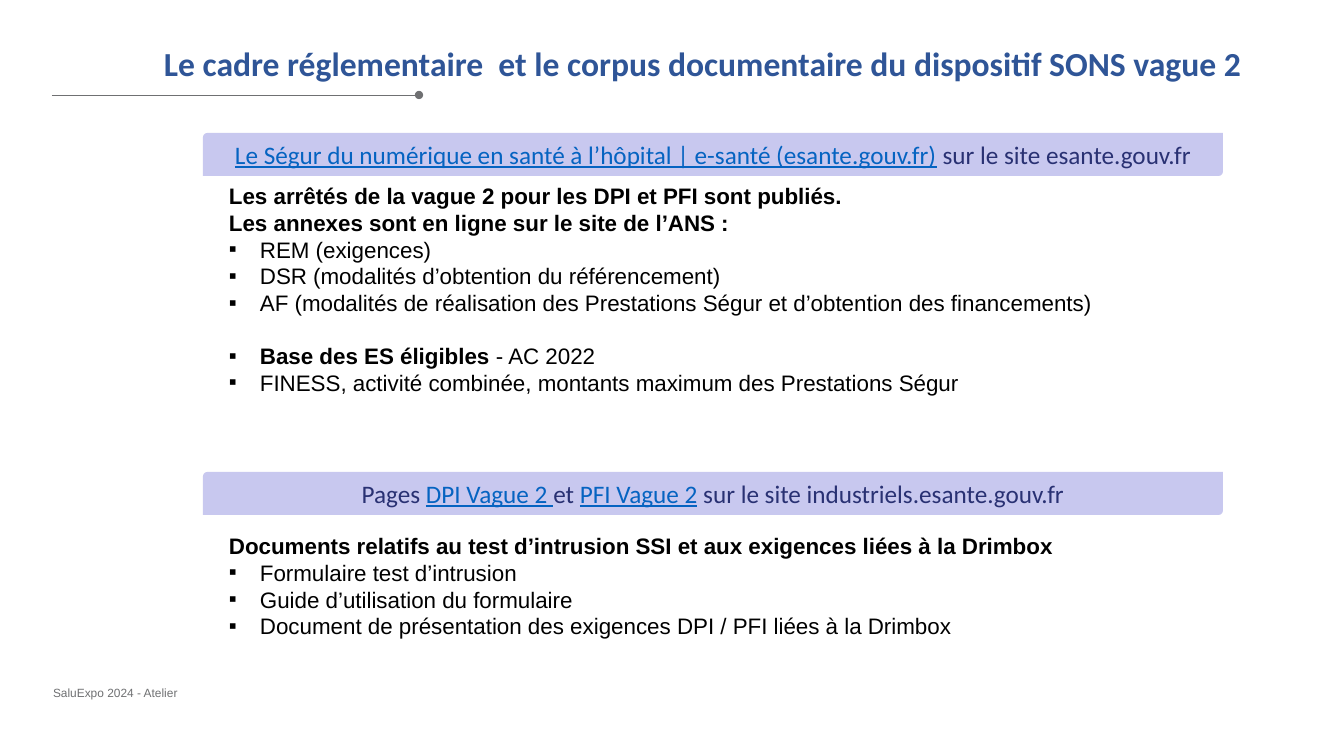
from lxml.etree import SubElement
from pptx import Presentation
from pptx.dml.color import RGBColor
from pptx.enum.shapes import MSO_CONNECTOR as Connector, MSO_SHAPE as Shape
from pptx.enum.text import MSO_ANCHOR as Anchor, PP_ALIGN as Align
from pptx.oxml.ns import qn
from pptx.util import Pt

PX = 12192000 / 1344
NAVY, LINK, TITLE_BLUE = "293173", "0563C1", "2F5597"
LILAC, GREY, BLACK = "C8C8EF", "6F7072", "000000"


def px(length):
    return round(length * PX)


def color(value):
    return RGBColor.from_string(value)


def style(span, font, size, ink, bold=False, underline=False):
    span.font.name = font
    span.font.size = Pt(size)
    span.font.color.rgb = color(ink)
    span.font.bold = bold
    span.font.underline = underline


def add_box(page, left, top, width, height, inset_x=10, inset_y=5):
    frame = page.shapes.add_textbox(px(left), px(top), px(width), px(height)).text_frame
    frame.word_wrap = True
    frame.margin_left = frame.margin_right = px(inset_x)
    frame.margin_top = frame.margin_bottom = px(inset_y)
    return frame


def add_bullet(para):
    props = para._p.get_or_add_pPr()
    props.set("marL", str(px(31)))
    props.set("indent", str(px(-31)))
    ink = SubElement(SubElement(props, qn("a:buClr")), qn("a:srgbClr"))
    ink.set("val", BLACK)
    SubElement(props, qn("a:buFont")).set("typeface", "Arial")
    SubElement(props, qn("a:buChar")).set("char", "▪")


def add_header(page, left, top, width):
    para = add_box(page, left + 102, top, width - 102, 50).paragraphs[0]
    para.text = "Le cadre réglementaire  et le corpus documentaire du dispositif SONS vague 2"
    style(para.runs[0], "Calibri", 24, TITLE_BLUE, bold=True)

    rule = page.shapes.add_connector(
        Connector.STRAIGHT, px(left), px(top + 57), px(left + 367), px(top + 57))
    rule.line.color.rgb = color(GREY)
    rule.line.width = Pt(0.5)
    SubElement(rule.line._get_or_add_ln(), qn("a:tailEnd")).set("type", "oval")
    SubElement(rule._element.spPr, qn("a:effectLst"))


def add_banner(page, left, top, width, parts):
    banner = page.shapes.add_shape(
        Shape.ROUND_2_DIAG_RECTANGLE, px(left), px(top), px(width), px(43))
    banner.adjustments[0], banner.adjustments[1] = 0.1, 0
    banner.shadow.inherit = False
    banner.fill.solid()
    banner.fill.fore_color.rgb = color(LILAC)
    banner.line.fill.background()
    banner.text_frame.vertical_anchor = Anchor.MIDDLE
    para = banner.text_frame.paragraphs[0]
    para.alignment = Align.CENTER
    for text, is_link in parts:
        span = para.add_run()
        span.text = text
        style(span, "Calibri", 18, LINK if is_link else NAVY, underline=is_link)


def add_list(page, left, top, width, height, headings, groups):
    frame = add_box(page, left, top, width, height)
    lines = [([(text, True)], False, 0) for text in headings]
    for number, group in enumerate(groups):
        for place, spans in enumerate(group):
            gap = 18.4 if number and not place else 0
            lines.append((spans, True, gap))
    for index, (spans, bulleted, gap) in enumerate(lines):
        para = frame.add_paragraph() if index else frame.paragraphs[0]
        if bulleted:
            add_bullet(para)
        if gap:
            para.space_before = Pt(gap)
        for text, bold in spans:
            span = para.add_run()
            span.text = text
            style(span, "Arial", 16, BLACK, bold=bold)


def add_footer(page, left, top, width):
    para = add_box(page, left, top, width, 14, 0, 0).paragraphs[0]
    para.text = "SaluExpo 2024 - Atelier"
    para.line_spacing = Pt(11)
    style(para.runs[0], "Arial", 8.5, GREY)


def main():
    deck = Presentation()
    deck.slide_width, deck.slide_height = px(1344), px(756)
    page = deck.slides.add_slide(deck.slide_layouts[6])

    add_header(page, 52, 38, 1210)
    add_banner(page, 203, 133, 1020, [
        ("Le Ségur du numérique en santé à l’hôpital | e-santé (esante.gouv.fr)", True),
        (" sur le site esante.gouv.fr", False),
    ])
    add_list(page, 219, 177, 1020, 230, [
        "Les arrêtés de la vague 2 pour les DPI et PFI sont publiés.",
        "Les annexes sont en ligne sur le site de l’ANS :",
    ], [
        [
            [("REM (exigences)", False)],
            [("DSR (modalités d’obtention du référencement)", False)],
            [("AF (modalités de réalisation des Prestations Ségur "
              "et d’obtention des financements)", False)],
        ],
        [
            [("Base des ES éligibles", True), (" - AC 2022", False)],
            [("FINESS, activité combinée, montants maximum des Prestations Ségur", False)],
        ],
    ])
    add_banner(page, 203, 472, 1020, [
        ("Pages ", False),
        ("DPI Vague 2 ", True),
        ("et ", False),
        ("PFI Vague 2", True),
        (" sur le site industriels.esante.gouv.fr", False),
    ])
    add_list(page, 219, 527, 1020, 120, [
        "Documents relatifs au test d’intrusion SSI et aux exigences liées à la Drimbox",
    ], [
        [
            [("Formulaire test d’intrusion", False)],
            [("Guide d’utilisation du formulaire", False)],
            [("Document de présentation des exigences DPI / PFI liées à la Drimbox", False)],
        ],
    ])
    add_footer(page, 53, 684, 727)
    deck.save("out.pptx")


if __name__ == "__main__":
    main()
